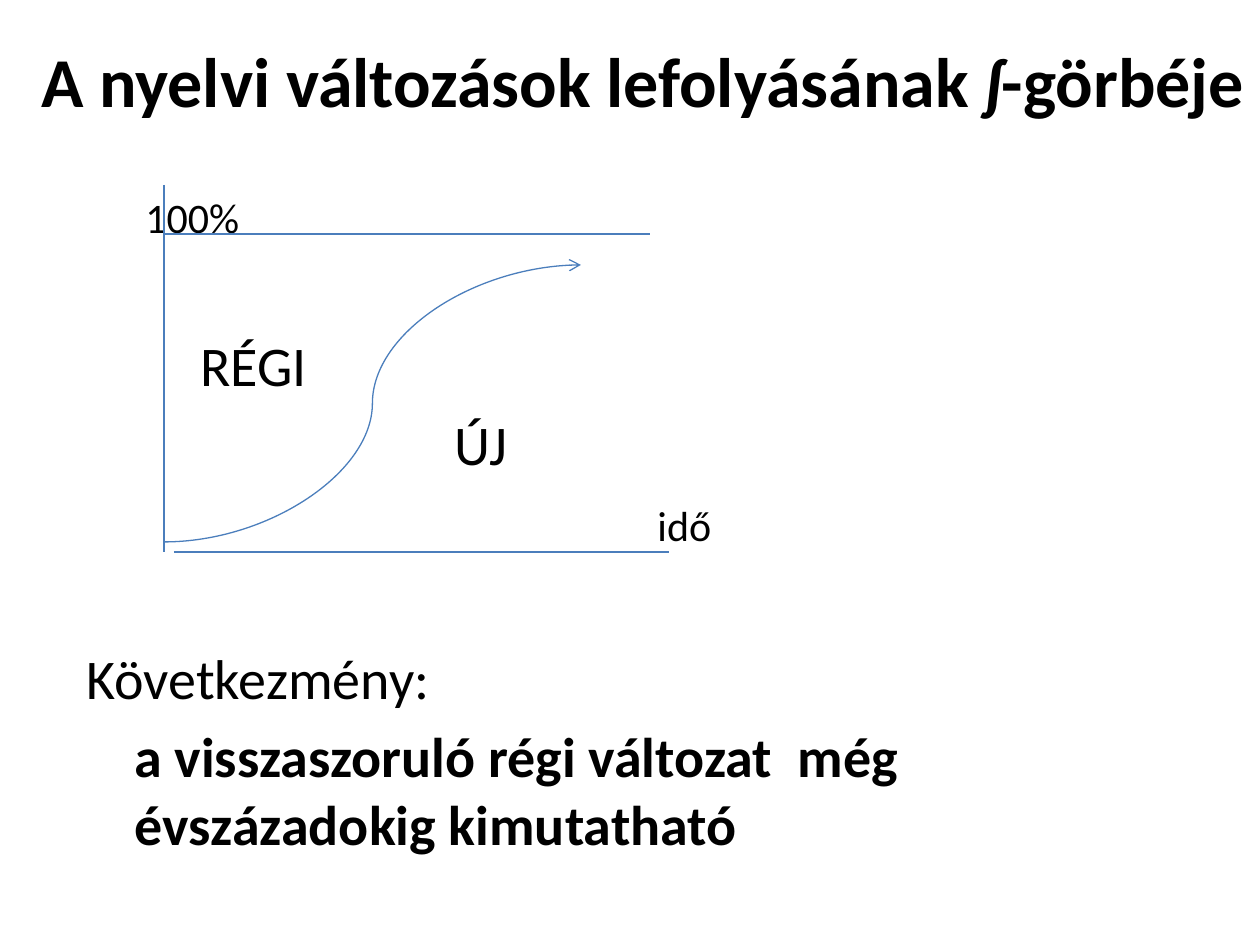
from lxml.etree import SubElement
from pptx import Presentation
from pptx.dml.color import RGBColor as Rgb
from pptx.enum.shapes import MSO_CONNECTOR as Link
from pptx.enum.text import MSO_ANCHOR as Anchor, PP_ALIGN as Align
from pptx.oxml.ns import qn
from pptx.util import Pt

INK = {"text": "000000", "line": "4B7EBC"}
SCALE = 914400 / 126

LINES = [
    ("100%", 24, 59, 0, False),
    ("RÉGI", 32, 114, 51, False),
    ("ÚJ", 32, 368, 6.4, False),
    ("idő", 24, 571, 13.3, False),
    ("Következmény:", 32, 0, 53.3, False),
    ("a visszaszoruló régi változat  még évszázadokig kimutatható", 32, 48, 6.4, True),
]
AXES = [
    (164, 185, 164, 552),
    (174, 552, 669, 552),
    (164, 234, 650, 234),
]


def px(num):
    """Turn pixels into EMU."""
    return round(num * SCALE)


def style(font, size, bold):
    """Set the shared font look."""
    font.name = "Calibri"
    font.size = Pt(size)
    font.bold = bold
    font.color.rgb = Rgb.from_string(INK["text"])


def add_title(slide):
    """Fill and place the title."""
    title = slide.shapes.title
    title.left, title.top, title.width, title.height = map(px, (25, 0, 1235, 158))
    frame = title.text_frame
    frame.vertical_anchor = Anchor.MIDDLE
    para = frame.paragraphs[0]
    para.alignment = Align.CENTER
    style(para.font, 40, True)
    for text, slant in (
        ("A nyelvi változások lefolyásának ", False),
        ("ʃ", True),
        ("-görbéje", False),
    ):
        run = para.add_run()
        run.text = text
        run.font.italic = slant


def add_body(slide):
    """Add the labels and the conclusion as indented paragraphs."""
    box = slide.shapes.add_textbox(*map(px, (74, 185, 1134, 725)))
    frame = box.text_frame
    frame.word_wrap = True
    for num, (text, size, indent, gap, bold) in enumerate(LINES):
        para = frame.add_paragraph() if num else frame.paragraphs[0]
        para.text = text
        para.space_before = Pt(gap)
        style(para.font, size, bold)
        props = para._p.get_or_add_pPr()
        props.set("marL", str(px(indent)))
        props.set("indent", "0")


def add_line(slide, ends, kind=Link.STRAIGHT, arrow=False):
    """Draw a thin line or curve."""
    line = slide.shapes.add_connector(kind, *map(px, ends))
    line.line.color.rgb = Rgb.from_string(INK["line"])
    line.line.width = Pt(0.75)
    if arrow:
        SubElement(line.line._get_or_add_ln(), qn("a:tailEnd"), type="arrow")
    SubElement(line._element.spPr, qn("a:effectLst"))


def main():
    """Build the slide."""
    deck = Presentation()
    deck.slide_width, deck.slide_height = px(1260), px(945)
    slide = deck.slides.add_slide(deck.slide_layouts[5])
    add_title(slide)
    add_body(slide)
    for ends in AXES:
        add_line(slide, ends)
    add_line(slide, (164, 542, 581, 265), Link.CURVE, True)
    deck.save("out.pptx")


if __name__ == "__main__":
    main()
